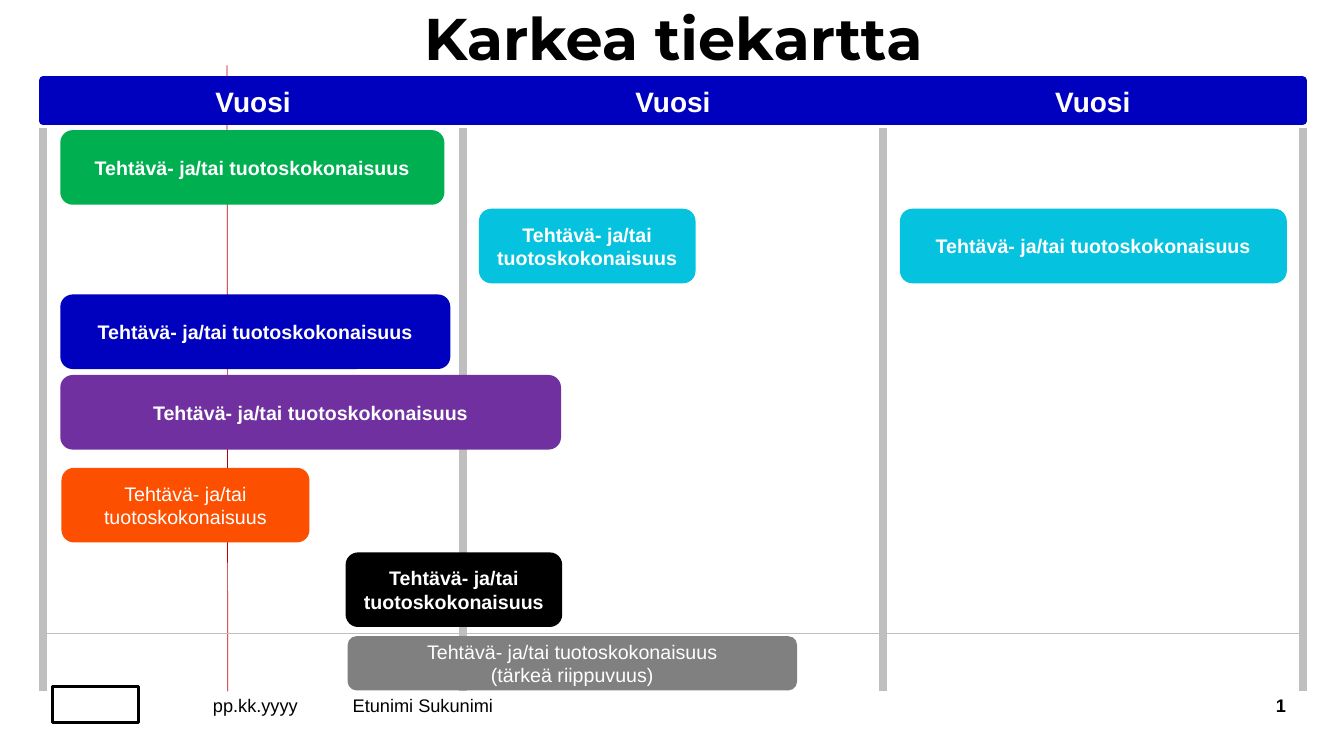
from dataclasses import dataclass

import pptx
import pptx.util
from pptx.dml.color import RGBColor
from pptx.enum.shapes import MSO_CONNECTOR, MSO_SHAPE
from pptx.enum.text import MSO_ANCHOR, MSO_AUTO_SIZE, PP_ALIGN
from pptx.oxml.ns import qn
from pptx.shapes.autoshape import Shape
from pptx.slide import Slide
from pptx.util import Cm, Pt

BLACK = RGBColor(0x00, 0x00, 0x00)
WHITE = RGBColor(0xFF, 0xFF, 0xFF)
BLUE = RGBColor(0x00, 0x00, 0xBF)
GREEN = RGBColor(0x00, 0xB0, 0x50)
CYAN = RGBColor(0x05, 0xC3, 0xDE)
PURPLE = RGBColor(0x70, 0x30, 0xA0)
ORANGE = RGBColor(0xFD, 0x4F, 0x00)
GRAY = RGBColor(0x80, 0x80, 0x80)
LIGHT_GRAY = RGBColor(0xBF, 0xBF, 0xBF)
RED = RGBColor(0xC0, 0x00, 0x00)

YEARS = 3
YEAR_WIDTH = 10.58
ROADMAP_LEFT = 1.09
ROADMAP_RIGHT = ROADMAP_LEFT + YEARS * YEAR_WIDTH
ROADMAP_BOTTOM = 17.42
HEADER_TOP = 2.03
TASK_NAME = "Tehtävä- ja/tai tuotoskokonaisuus"


@dataclass(frozen=True)
class Task:
    left: float
    top: float
    width: float
    color: RGBColor
    bold: bool = True
    height: float = 1.88
    text: str = TASK_NAME


@dataclass(frozen=True)
class FooterItem:
    text: str
    left: float
    width: float
    align: PP_ALIGN
    bold: bool = False


TASKS = [
    Task(1.52, 3.28, 9.68, GREEN),
    Task(12.07, 5.26, 5.46, CYAN),
    Task(1.52, 9.45, 12.62, PURPLE),
    Task(8.76, 16.03, 11.33, GRAY, bold=False, height=1.37,
         text=TASK_NAME + "\n(tärkeä riippuvuus)"),
    Task(1.55, 11.79, 6.25, ORANGE, bold=False),
    Task(1.52, 7.42, 9.83, BLUE),
    Task(8.71, 13.92, 5.46, BLACK),
    Task(22.68, 5.26, 9.75, CYAN),
]
FOOTER = [
    FooterItem("pp.kk.yyyy", 4.62, 3.63, PP_ALIGN.CENTER),
    FooterItem("Etunimi Sukunimi", 8.89, 11.43, PP_ALIGN.LEFT),
    FooterItem("1", 28.98, 3.43, PP_ALIGN.RIGHT, bold=True),
]


def write_text(shape: Shape, text: str, *, size: float, color: RGBColor = BLACK,
               bold: bool = False, font: str = "Arial",
               align: PP_ALIGN = PP_ALIGN.LEFT,
               anchor: MSO_ANCHOR = MSO_ANCHOR.MIDDLE, wrap: bool = True,
               inset_x: float = 0, inset_y: float = 0,
               line_spacing: float = 1.0) -> None:
    frame = shape.text_frame
    frame.auto_size = MSO_AUTO_SIZE.NONE
    frame.word_wrap = wrap
    frame.vertical_anchor = anchor
    frame.margin_left = frame.margin_right = Cm(inset_x)
    frame.margin_top = frame.margin_bottom = Cm(inset_y)
    frame.text = text
    for paragraph in frame.paragraphs:
        paragraph.alignment = align
        paragraph.line_spacing = line_spacing
        for run in paragraph.runs:
            run.font.name = font
            run.font.size = Pt(size)
            run.font.bold = bold
            run.font.color.rgb = color


def add_line(slide: Slide, start: tuple[float, float], end: tuple[float, float],
             color: RGBColor, weight: float) -> None:
    line = slide.shapes.add_connector(
        MSO_CONNECTOR.STRAIGHT, *map(Cm, start), *map(Cm, end))
    line.line.color.rgb = color
    line.line.width = Pt(weight)
    properties = line._element.spPr
    properties.append(properties.makeelement(qn("a:effectLst"), {}))


def add_block(slide: Slide, kind: MSO_SHAPE, left: float, top: float,
              width: float, height: float, fill: RGBColor,
              outline: RGBColor | None = None, weight: float = 0) -> Shape:
    block = slide.shapes.add_shape(kind, Cm(left), Cm(top), Cm(width), Cm(height))
    block.shadow.inherit = False
    block.fill.solid()
    block.fill.fore_color.rgb = fill
    if outline is None:
        block.line.fill.background()
    else:
        block.line.color.rgb = outline
        block.line.width = Pt(weight)
    return block


def add_title(slide: Slide) -> None:
    title = slide.shapes.title
    title.left, title.top = Cm(5.26), Cm(0.25)
    title.width, title.height = Cm(23.42), Cm(1.9)
    write_text(title, "Karkea tiekartta", size=42, bold=True, font="Montserrat",
               align=PP_ALIGN.CENTER, anchor=MSO_ANCHOR.TOP, line_spacing=0.9)


def add_footer(slide: Slide) -> None:
    add_block(slide, MSO_SHAPE.RECTANGLE, 1.33, 17.31, 2.17, 0.9, WHITE, BLACK, 2)
    for item in FOOTER:
        box = slide.shapes.add_textbox(
            Cm(item.left), Cm(17.42), Cm(item.width), Cm(0.71))
        write_text(box, item.text, size=13, bold=item.bold, align=item.align)


def add_year_grid(slide: Slide) -> None:
    for index in range(YEARS + 1):
        x = ROADMAP_LEFT + index * YEAR_WIDTH
        add_line(slide, (x, 3.23), (x, ROADMAP_BOTTOM), LIGHT_GRAY, 6)
    add_block(slide, MSO_SHAPE.RECTANGLE, ROADMAP_LEFT, HEADER_TOP,
              YEARS * YEAR_WIDTH, 1.02, BLUE, BLUE, 6)
    for index in range(YEARS):
        year = slide.shapes.add_textbox(
            Cm(5.33 + index * YEAR_WIDTH), Cm(HEADER_TOP), Cm(2.11), Cm(1.07))
        write_text(year, "Vuosi", size=20, color=WHITE, bold=True, wrap=False,
                   anchor=MSO_ANCHOR.TOP, inset_x=0.1, inset_y=0.1)


def add_tasks(slide: Slide) -> None:
    for task in TASKS:
        block = add_block(slide, MSO_SHAPE.ROUNDED_RECTANGLE, task.left, task.top,
                          task.width, task.height, task.color)
        write_text(block, task.text, size=14, color=WHITE, bold=task.bold,
                   align=PP_ALIGN.CENTER, inset_y=0.1)


def main() -> None:
    deck = pptx.Presentation()
    deck.slide_width, deck.slide_height = Cm(33.87), Cm(19.05)
    slide = deck.slides.add_slide(deck.slide_layouts[5])
    add_title(slide)
    add_line(slide, (5.72, 1.65), (5.74, ROADMAP_BOTTOM), RED, 0.5)
    add_footer(slide)
    add_year_grid(slide)
    add_line(slide, (ROADMAP_LEFT, 15.95), (ROADMAP_RIGHT, 15.95), LIGHT_GRAY, 0.5)
    add_tasks(slide)
    deck.save("out.pptx")


if __name__ == "__main__":
    main()
